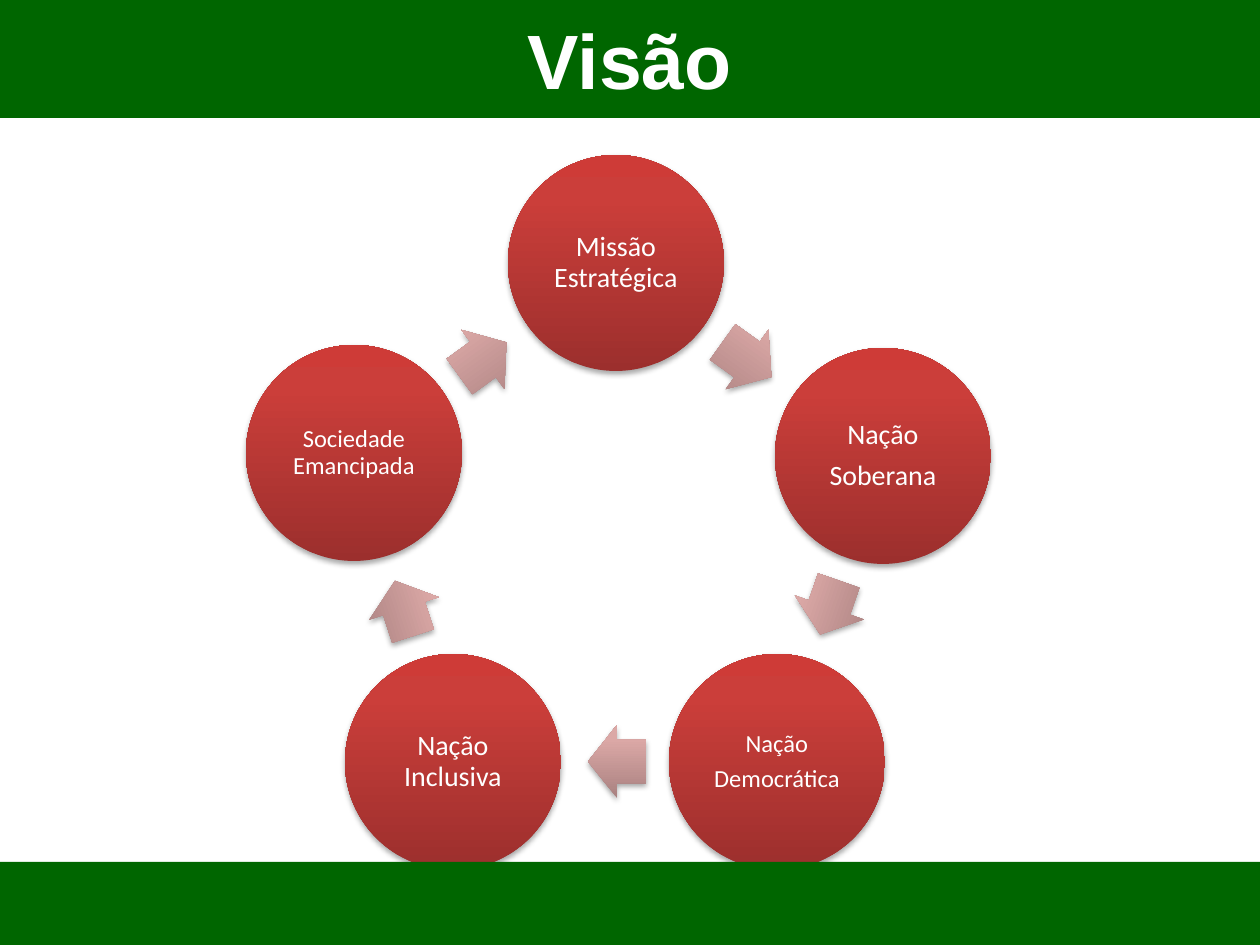
from copy import deepcopy

from lxml import etree
from pptx import Presentation
from pptx import util as u
from pptx.dml.color import RGBColor
from pptx.enum import shapes, text
from pptx.oxml.ns import qn

PX = 914400 // 126
COLORS = {"band": "006600", "text": "FFFFFF", "shadow": "000000"}
CIRCLE_GRADIENT = [(0, "9C2F2D"), (0.8, "CB3E3A"), (1, "CE3B37")]
ARROW_GRADIENT = [(0, "A98180"), (0.8, "DBA8A6"), (1, "DDA7A6")]
CIRCLE_SIZE = 216
ARROW_HEIGHT = 73

# left, top, paragraphs, font size
STAGES = [
    (508, 155, ["Missão Estratégica"], 16),
    (775, 348, ["Nação", "Soberana"], 16),
    (669, 654, ["Nação", "Democrática"], 14),
    (345, 654, ["Nação Inclusiva"], 16),
    (246, 345, ["Sociedade Emancipada"], 14),
]
RIGHT = shapes.MSO_SHAPE.RIGHT_ARROW
LEFT = shapes.MSO_SHAPE.LEFT_ARROW
# kind, left, top, width, rotation
ARROWS = [
    (RIGHT, 717, 323, 60, 35.7),
    (LEFT, 801, 571, 57, 289.1),
    (LEFT, 588, 725, 58, 0),
    (LEFT, 375, 572, 58, 72),
    (RIGHT, 454, 323, 58, 324),
]


def rgb(name):
    return RGBColor.from_string(COLORS[name])


def write_text(shape, paragraphs, size, font, bold=False, inset=0,
               line_spacing=1.0, space_after=0):
    frame = shape.text_frame
    frame.text = "\n".join(paragraphs)
    frame.word_wrap = True
    frame.vertical_anchor = text.MSO_ANCHOR.MIDDLE
    frame.margin_left = frame.margin_right = inset * PX
    frame.margin_top = frame.margin_bottom = inset * PX
    for paragraph in frame.paragraphs:
        paragraph.alignment = text.PP_ALIGN.CENTER
        paragraph.line_spacing = line_spacing
        paragraph.space_before = u.Pt(0)
        paragraph.space_after = u.Pt(space_after)
        for run in paragraph.runs:
            run.font.size = u.Pt(size)
            run.font.name = font
            run.font.bold = bold
            run.font.color.rgb = rgb("text")


def add_shape(slide, kind, left, top, width, height):
    shape = slide.shapes.add_shape(kind, left * PX, top * PX, width * PX, height * PX)
    shape.shadow.inherit = False
    shape.line.fill.background()
    return shape


def fill_gradient(shape, stops):
    """Fill from bottom to top with three colour stops."""
    shape.fill.gradient()
    shape.fill.gradient_angle = 90
    stop_list = shape._element.spPr.find(qn("a:gradFill")).find(qn("a:gsLst"))
    stop_list.append(deepcopy(stop_list[0]))
    for stop, (position, color) in zip(shape.fill.gradient_stops, stops):
        stop.position = position
        stop.color.rgb = RGBColor.from_string(color)


def add_shadow(shape):
    effects = shape._element.spPr.find(qn("a:effectLst"))
    shadow = etree.SubElement(effects, qn("a:outerShdw"), blurRad="40000",
                              dist="23000", dir="5400000", rotWithShape="0")
    color = etree.SubElement(shadow, qn("a:srgbClr"), val=COLORS["shadow"])
    etree.SubElement(color, qn("a:alpha"), val="35000")


def add_stage(slide, left, top, paragraphs, size):
    circle = add_shape(slide, shapes.MSO_SHAPE.OVAL, left, top, CIRCLE_SIZE, CIRCLE_SIZE)
    fill_gradient(circle, CIRCLE_GRADIENT)
    add_shadow(circle)
    write_text(circle, paragraphs, size, "Calibri", inset=2,
               line_spacing=0.9, space_after=0.35 * size)


def add_arrow(slide, kind, left, top, width, rotation):
    arrow = add_shape(slide, kind, left, top, width, ARROW_HEIGHT)
    arrow.adjustments[0] = 0.6
    arrow.adjustments[1] = 0.5
    arrow.rotation = rotation
    fill_gradient(arrow, ARROW_GRADIENT)
    add_shadow(arrow)


def format_title(slide):
    title = slide.shapes.title
    title.left, title.top = 0, 0
    title.width, title.height = 1260 * PX, 118 * PX
    title.fill.solid()
    title.fill.fore_color.rgb = rgb("band")
    write_text(title, ["Visão"], 44, "Arial", bold=True, inset=6)


def add_footer(slide):
    footer = add_shape(slide, shapes.MSO_SHAPE.RECTANGLE, 0, 862, 1261, 83)
    footer.fill.solid()
    footer.fill.fore_color.rgb = rgb("band")


def main():
    presentation = Presentation()
    presentation.slide_width = u.Inches(10)
    presentation.slide_height = u.Inches(7.5)
    slide = presentation.slides.add_slide(presentation.slide_layouts[5])
    format_title(slide)
    for stage, arrow in zip(STAGES, ARROWS):
        add_stage(slide, *stage)
        add_arrow(slide, *arrow)
    add_footer(slide)
    presentation.save("out.pptx")


if __name__ == "__main__":
    main()
